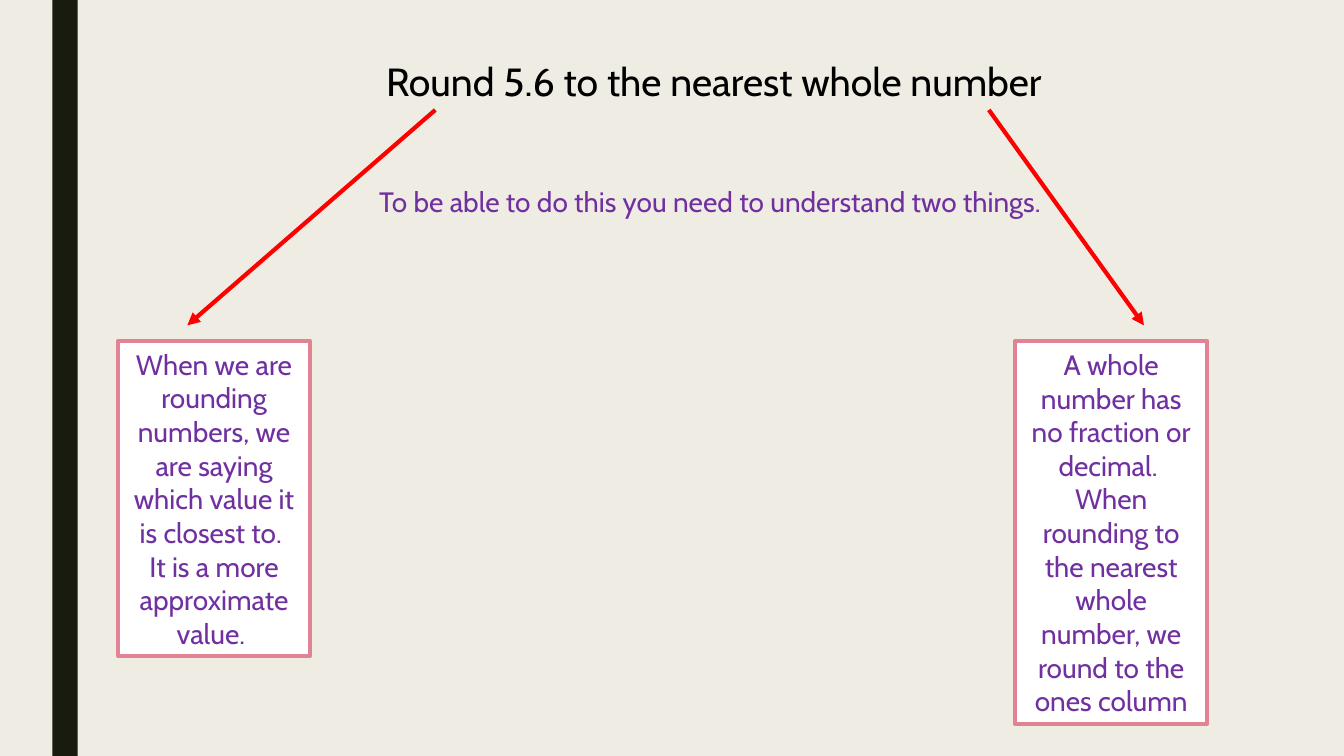
import lxml.etree
import pptx
import pptx.dml.color
import pptx.enum.shapes
import pptx.enum.text
import pptx.oxml.ns
import pptx.util
from pptx.dml.color import RGBColor
from pptx.util import Cm

BACKGROUND = RGBColor(0xEF, 0xED, 0xE3)
BAND = RGBColor(0x19, 0x1B, 0x0E)
BLACK = RGBColor(0x00, 0x00, 0x00)
WHITE = RGBColor(0xFF, 0xFF, 0xFF)
PURPLE = RGBColor(0x70, 0x30, 0xA0)
PINK = RGBColor(0xE2, 0x83, 0x94)
RED = RGBColor(0xFF, 0x00, 0x00)

ARROW_TOP, ARROW_BOTTOM = 2.77, 8.2
BOX_TOP, BOX_WIDTH = 8.59, 4.85


def write_text(shape, lines, size, color, wrap):
    frame = shape.text_frame
    frame.text = "\n".join(lines)
    frame.word_wrap = wrap
    frame.auto_size = pptx.enum.text.MSO_AUTO_SIZE.SHAPE_TO_FIT_TEXT
    for paragraph in frame.paragraphs:
        paragraph.alignment = pptx.enum.text.PP_ALIGN.CENTER
        paragraph.font.name = "Cabin"
        paragraph.font.size = pptx.util.Pt(size)
        paragraph.font.color.rgb = color


def add_heading(slide, left, top, width, height, text, size, color):
    shape = slide.shapes.add_textbox(Cm(left), Cm(top), Cm(width), Cm(height))
    write_text(shape, [text], size, color, False)


def add_rectangle(slide, left, top, width, height, fill):
    shape = slide.shapes.add_shape(
        pptx.enum.shapes.MSO_SHAPE.RECTANGLE, Cm(left), Cm(top), Cm(width), Cm(height)
    )
    shape.shadow.inherit = False
    shape.fill.solid()
    shape.fill.fore_color.rgb = fill
    shape.line.fill.background()
    return shape


def add_explanation(slide, left, height, lines):
    shape = add_rectangle(slide, left, BOX_TOP, BOX_WIDTH, height, WHITE)
    shape.line.color.rgb = PINK
    shape.line.width = pptx.util.Pt(2.75)
    write_text(shape, lines, 20, PURPLE, True)


def add_arrow(slide, start, end):
    arrow = slide.shapes.add_connector(
        pptx.enum.shapes.MSO_CONNECTOR.STRAIGHT,
        Cm(start), Cm(ARROW_TOP), Cm(end), Cm(ARROW_BOTTOM),
    )
    arrow.line.color.rgb = RED
    arrow.line.width = pptx.util.Pt(3)
    qn = pptx.oxml.ns.qn
    properties = arrow.element.spPr
    lxml.etree.SubElement(properties.find(qn("a:ln")), qn("a:tailEnd"), type="triangle")
    lxml.etree.SubElement(properties, qn("a:effectLst"))


def main():
    presentation = pptx.Presentation()
    presentation.slide_width = Cm(33.87)
    presentation.slide_height = Cm(19.05)
    slide = presentation.slides.add_slide(presentation.slide_layouts[6])
    slide.background.fill.solid()
    slide.background.fill.fore_color.rgb = BACKGROUND

    add_rectangle(slide, 1.32, 0, 0.64, 19.05, BAND)
    add_heading(slide, 9.35, 1.32, 17.27, 1.45,
                "Round 5.6 to the nearest whole number", 28, BLACK)
    add_heading(slide, 9.25, 4.52, 17.45, 1.12,
                "To be able to do this you need to understand two things. ", 20, PURPLE)
    add_arrow(slide, 10.97, 4.72)
    add_explanation(slide, 2.97, 7.95, [
        "When we are rounding numbers, we are saying which value it is closest to. ",
        "It is a more approximate value. ",
    ])
    add_arrow(slide, 24.92, 28.83)
    add_explanation(slide, 25.58, 9.65, [
        "A whole number has no fraction or decimal. ",
        "When rounding to the nearest whole number, we round to the ones column",
    ])
    presentation.save("out.pptx")


if __name__ == "__main__":
    main()
